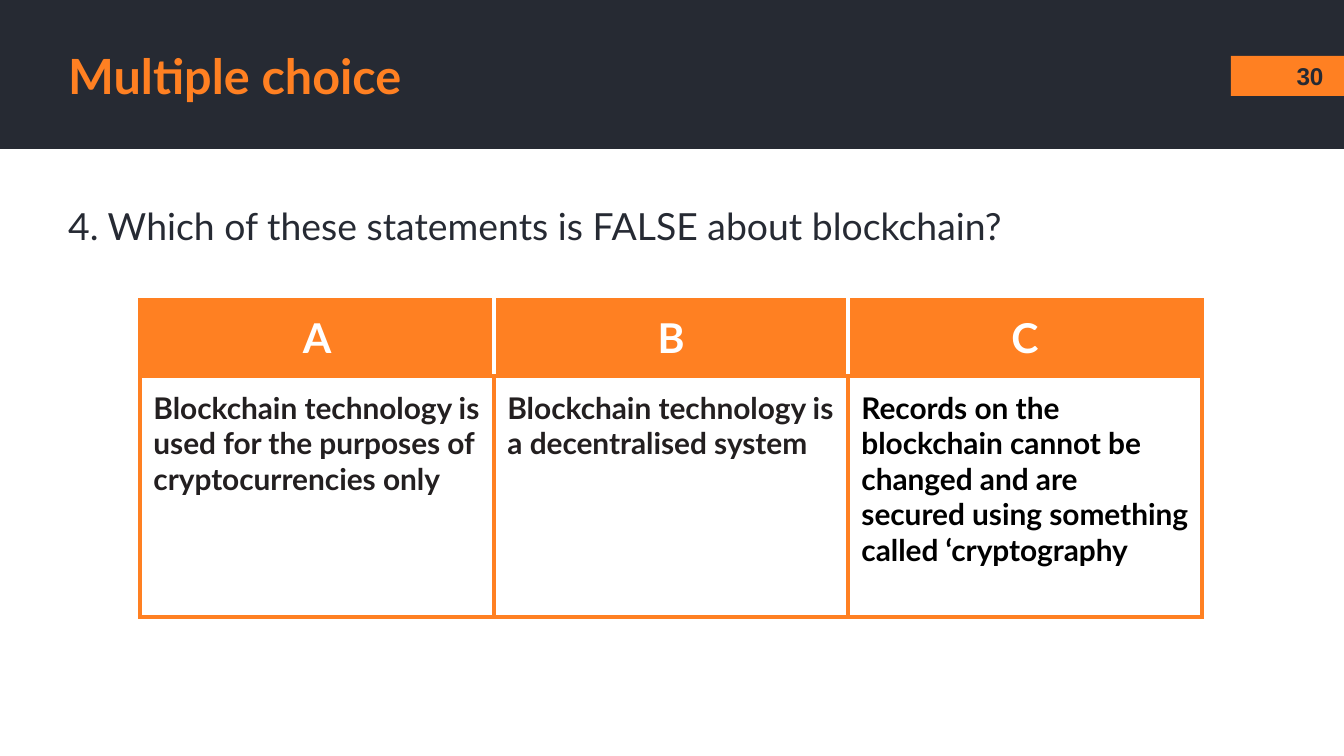
from lxml.etree import SubElement
from pptx import Presentation
from pptx.dml.color import RGBColor as Rgb
from pptx.enum.shapes import MSO_SHAPE as Shape
from pptx.enum.text import MSO_ANCHOR as Anchor, PP_ALIGN as Align
from pptx.oxml.ns import qn
from pptx.util import Emu, Inches, Pt

COLORS = {
    "dark": "262A33",
    "orange": "FF8022",
    "white": "FFFFFF",
    "ink": "231F20",
    "black": "000000",
}
EMU_PER_PX = 914400 / 134.4
MARGIN = Inches(0.1)
BORDER = Pt(2.25)
ANSWERS = [
    ("A", "Blockchain technology is used for the purposes of cryptocurrencies only", "ink"),
    ("B", "Blockchain technology is a decentralised system", "ink"),
    ("C", "Records on the blockchain cannot be changed and are secured "
          "using something called ‘cryptography", "black"),
]


def px(*lengths):
    return [Emu(round(length * EMU_PER_PX)) for length in lengths]


def color(name):
    return Rgb.from_string(COLORS[name])


def add_bar(page, place, fill):
    bar = page.shapes.add_shape(Shape.RECTANGLE, *px(*place))
    bar.shadow.inherit = False
    bar.fill.solid()
    bar.fill.fore_color.rgb = color(fill)
    bar.line.fill.background()


def write(frame, text, size, ink, bold=False, align=Align.LEFT, font="Lato"):
    para = frame.paragraphs[0]
    para.text = text
    para.alignment = align
    para.font.name = font
    para.font.size = Pt(size)
    para.font.bold = bold
    para.font.color.rgb = color(ink)


def add_text(page, place, text, size, ink, anchor=Anchor.MIDDLE, **style):
    frame = page.shapes.add_textbox(*px(*place)).text_frame
    frame.word_wrap = True
    frame.vertical_anchor = anchor
    frame.margin_left = frame.margin_right = MARGIN
    frame.margin_top = frame.margin_bottom = MARGIN
    write(frame, text, size, ink, **style)


def set_borders(cell, left, right):
    properties = cell._tc.get_or_add_tcPr()
    sides = {"L": left, "R": right, "T": "orange", "B": "orange"}
    for side, name in sides.items():
        line = SubElement(properties, qn(f"a:ln{side}"), w=str(BORDER))
        fill = SubElement(line, qn("a:solidFill"))
        SubElement(fill, qn("a:srgbClr"), val=COLORS[name])


def fill_cell(cell, text, size, ink, **style):
    cell.margin_left = cell.margin_right = MARGIN
    cell.margin_top = cell.margin_bottom = MARGIN
    cell.vertical_anchor = Anchor.TOP
    write(cell.text_frame, text, size, ink, bold=True, **style)


def add_answers(page, left, top, column_width, row_heights):
    count = len(ANSWERS)
    place = px(left, top, column_width * count, sum(row_heights))
    table = page.shapes.add_table(2, count, *place).table
    for row, height in zip(table.rows, px(*row_heights)):
        row.height = height
    for index, (letter, statement, ink) in enumerate(ANSWERS):
        table.columns[index].width = px(column_width)[0]
        head, body = table.cell(0, index), table.cell(1, index)
        set_borders(head, "white" if index else "orange",
                    "white" if index < count - 1 else "orange")
        set_borders(body, "orange", "orange")
        head.fill.solid()
        head.fill.fore_color.rgb = color("orange")
        body.fill.background()
        fill_cell(head, letter, 22, "white", align=Align.CENTER)
        fill_cell(body, statement, 16, ink)


def main():
    deck = Presentation()
    deck.slide_width, deck.slide_height = px(1344, 756)
    page = deck.slides.add_slide(deck.slide_layouts[6])
    add_bar(page, (0, 0, 1344, 149), "dark")
    add_bar(page, (1231, 56, 113, 40), "orange")
    add_text(page, (55, 190, 1126, 172),
             "4. Which of these statements is FALSE about blockchain?",
             20, "dark", anchor=Anchor.TOP)
    add_text(page, (55, 38, 1175, 75), "Multiple choice", 26, "orange", bold=True)
    add_answers(page, 140, 300, 354, (76, 241))
    add_text(page, (1275, 59, 70, 34), "30", 13, "dark",
             bold=True, align=Align.CENTER, font="Arial")
    deck.save("out.pptx")


if __name__ == "__main__":
    main()
